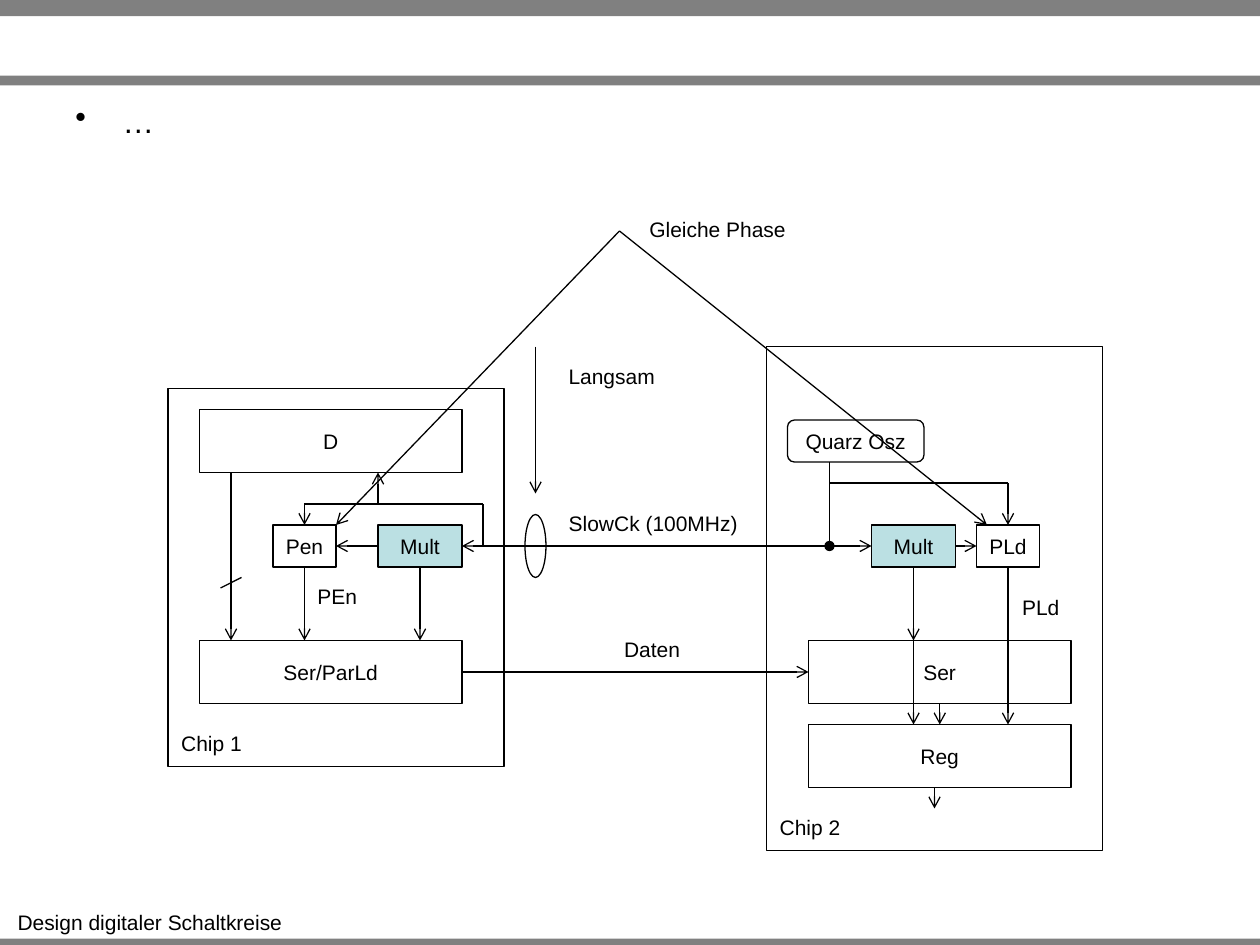
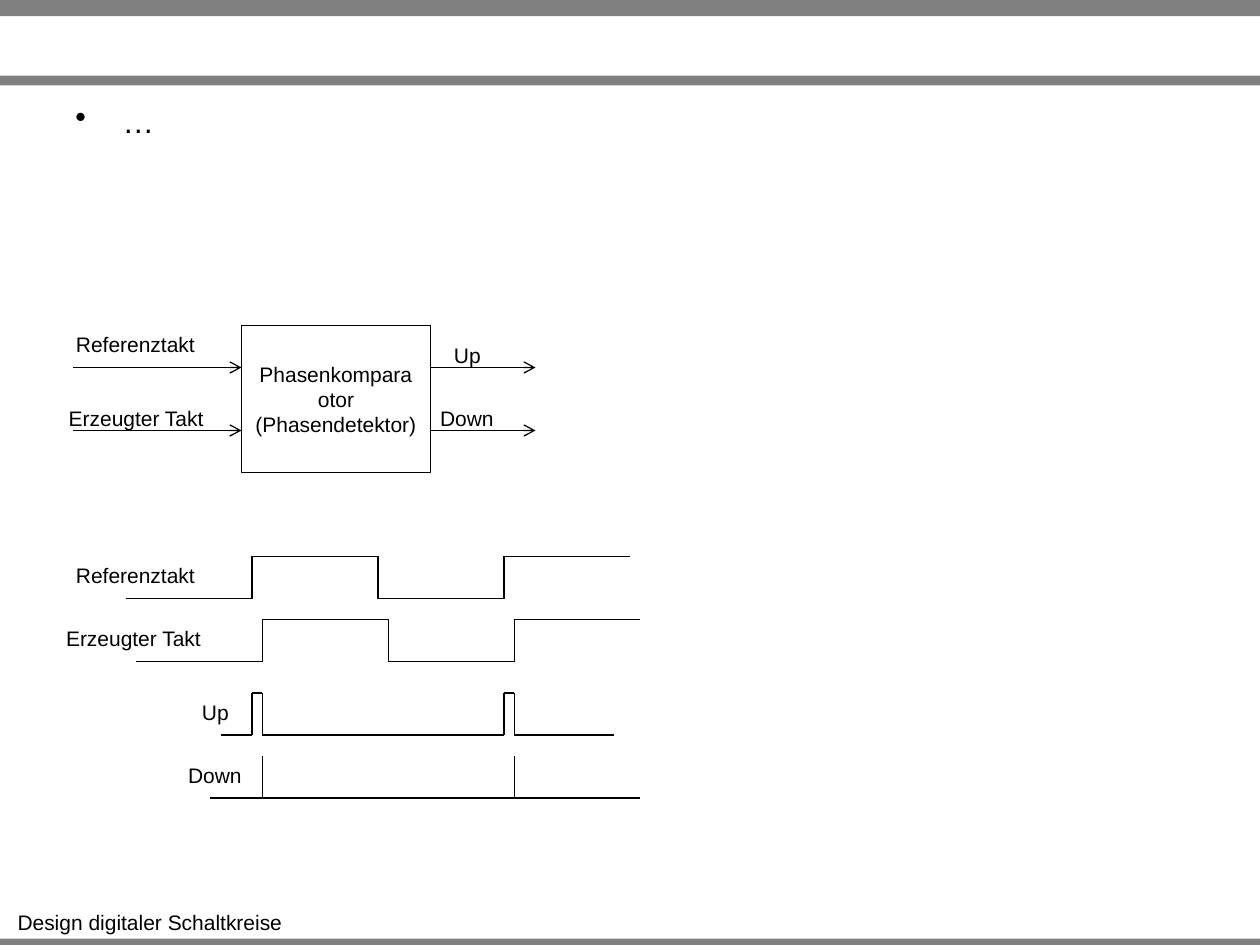
from dataclasses import dataclass
from itertools import pairwise

from pptx import Presentation
from pptx.dml.color import RGBColor
from pptx.enum.shapes import MSO_CONNECTOR, MSO_SHAPE
from pptx.enum.text import MSO_ANCHOR, MSO_AUTO_SIZE, PP_ALIGN
from pptx.oxml.ns import qn
from pptx.util import Pt
from lxml.etree import SubElement


@dataclass(frozen=True)
class Theme:
    font: str = "Arial"
    ink: RGBColor = RGBColor(0, 0, 0)
    band: RGBColor = RGBColor(0x80, 0x80, 0x80)
    accent: RGBColor = RGBColor(0xBB, 0xE0, 0xE3)
    label_size: float = 12
    body_size: float = 18
    line_width: float = 0.75


THEME = Theme()
TOP, LEFT, BOTTOM, RIGHT = range(4)
LABEL_HEIGHT = 21.6


@dataclass
class Joint:
    """The middle of one side of a box."""
    box: object
    side: int

    @property
    def point(self):
        box = self.box
        across = {LEFT: 0, RIGHT: 1}.get(self.side, 0.5)
        down = {TOP: 0, BOTTOM: 1}.get(self.side, 0.5)
        return ((box.left + across * box.width) / Pt(1),
                (box.top + down * box.height) / Pt(1))


# Basic parts

def write(para, text, size=THEME.label_size):
    span = para.add_run()
    span.text = text
    span.font.name = THEME.font
    span.font.size = Pt(size)
    span.font.color.rgb = THEME.ink


def shape(page, left, top, width, height, lines=(), fill=None,
          kind=MSO_SHAPE.RECTANGLE, outlined=True):
    box = page.shapes.add_shape(kind, Pt(left), Pt(top), Pt(width), Pt(height))
    box.shadow.inherit = False
    if fill is None:
        box.fill.background()
    else:
        box.fill.solid()
        box.fill.fore_color.rgb = fill
    if outlined:
        box.line.color.rgb = THEME.ink
        box.line.width = Pt(THEME.line_width)
    else:
        box.line.fill.background()
    frame = box.text_frame
    frame.word_wrap = True
    frame.vertical_anchor = MSO_ANCHOR.MIDDLE
    for index, line in enumerate(lines):
        para = frame.add_paragraph() if index else frame.paragraphs[0]
        para.alignment = PP_ALIGN.CENTER
        write(para, line)
    return box


def label(page, text, left, top, width):
    box = page.shapes.add_textbox(Pt(left), Pt(top), Pt(width), Pt(LABEL_HEIGHT))
    frame = box.text_frame
    frame.word_wrap = False
    frame.auto_size = MSO_AUTO_SIZE.SHAPE_TO_FIT_TEXT
    para = frame.paragraphs[0]
    para.alignment = PP_ALIGN.CENTER
    write(para, text)


def wire(page, start, end, arrow=False, dot=False):
    """Draw a line between two points or joints."""
    ends = [spot.point if isinstance(spot, Joint) else spot for spot in (start, end)]
    line = page.shapes.add_connector(
        MSO_CONNECTOR.STRAIGHT, *(Pt(value) for spot in ends for value in spot))
    if isinstance(start, Joint):
        line.begin_connect(start.box, start.side)
    if isinstance(end, Joint):
        line.end_connect(end.box, end.side)
    line.line.color.rgb = THEME.ink
    line.line.width = Pt(THEME.line_width)
    outline = line.line._get_or_add_ln()
    if dot:
        SubElement(outline, qn("a:headEnd"), type="oval")
    if arrow:
        SubElement(outline, qn("a:tailEnd"), type="arrow")
    SubElement(line._element.spPr, qn("a:effectLst"))


def route(page, *spots, arrow=False):
    """Chain wires through all spots, with an arrowhead on the last one."""
    for start, end in pairwise(spots):
        wire(page, start, end, arrow=arrow and end is spots[-1])


def offset(left, top):
    """Return a function that moves a local point, and any size after it."""
    return lambda x, y, *size: (left + x, top + y, *size)


# Frame shared by all slides

def add_page(deck):
    page = deck.slides.add_slide(deck.slide_layouts[6])
    for top, height in ((536.4, 6), (0, 9.2), (43.2, 5.6)):
        shape(page, 0, top, 720, height, fill=THEME.band, outlined=False)
    label(page, "Design digitaler Schaltkreise", 2.2, 516.2, 167)

    body = page.shapes.add_textbox(Pt(36), Pt(54.7), Pt(648), Pt(71.3))
    body.text_frame.word_wrap = True
    para = body.text_frame.paragraphs[0]
    settings = para._p.get_or_add_pPr()
    settings.set("marL", str(Pt(27)))
    settings.set("indent", str(-Pt(27)))
    SubElement(settings, qn("a:buChar"), char="•")
    write(para, "…", THEME.body_size)
    return page


# Block diagram of the two chips

def add_chip(page, name, left, top, height):
    shape(page, left, top, 192, height)
    label(page, name, left, top + height - 24, 49.7)
    return offset(left, top)


def add_sender(page, left, top):
    at = add_chip(page, "Chip 1", left, top, 216)
    data = shape(page, *at(18, 12, 150, 36), ["D"])
    serializer = shape(page, *at(18, 144, 150, 36), ["Ser/ParLd"])
    mult = shape(page, *at(120, 78, 48, 24), ["Mult"], THEME.accent)
    enable = shape(page, *at(60, 78, 36, 24), ["Pen"])

    wire(page, Joint(enable, BOTTOM), at(78, 144), arrow=True)
    wire(page, Joint(mult, BOTTOM), at(144, 144), arrow=True)
    wire(page, Joint(mult, LEFT), Joint(enable, RIGHT), arrow=True)
    label(page, "PEn", *at(78, 108, 37.4))

    # Bus from D, with its slash
    wire(page, at(36, 48), at(36, 144), arrow=True)
    wire(page, at(42, 108), at(30, 114))

    # Slow clock to Pen and D
    route(page, at(180, 90), at(180, 66), at(78, 66), Joint(enable, TOP), arrow=True)
    wire(page, at(120, 66), at(120, 48), arrow=True)
    return serializer, mult


def add_receiver(page, left, top):
    at = add_chip(page, "Chip 2", left, top, 288)
    shape(page, *at(12, 42, 78, 24), ["Quarz Osz"], kind=MSO_SHAPE.ROUNDED_RECTANGLE)
    mult = shape(page, *at(60, 102, 48, 24), ["Mult"], THEME.accent)
    load = shape(page, *at(120, 102, 36, 24), ["PLd"])
    serial = shape(page, *at(24, 168, 150, 36), ["Ser"])
    register = shape(page, *at(24, 216, 150, 36), ["Reg"])

    # Oscillator output
    wire(page, at(36, 66), at(36, 114))
    wire(page, at(30, 114), Joint(mult, LEFT), arrow=True)
    route(page, at(36, 78), at(138, 78), Joint(load, TOP), arrow=True)

    # Clocks and data to the registers
    wire(page, Joint(mult, RIGHT), Joint(load, LEFT), arrow=True)
    wire(page, Joint(mult, BOTTOM), at(84, 168), arrow=True)
    wire(page, at(84, 168), at(84, 216), arrow=True)
    wire(page, Joint(load, BOTTOM), at(138, 216), arrow=True)
    wire(page, Joint(serial, BOTTOM), Joint(register, TOP), arrow=True)
    wire(page, at(96, 252), at(96, 264), arrow=True)
    label(page, "PLd", *at(138.7, 138, 36))
    return serial


def add_chip_links(page, serializer, mult, serial):
    wire(page, Joint(serializer, RIGHT), Joint(serial, LEFT), arrow=True)
    label(page, "Daten", 349.2, 360, 46.8)

    # Slow clock line, with a ring and its pointer
    wire(page, (474, 312), Joint(mult, RIGHT), arrow=True, dot=True)
    label(page, "SlowCk (100MHz)", 317.5, 288, 111.6)
    shape(page, 300, 294, 12, 36, kind=MSO_SHAPE.OVAL)
    wire(page, (306, 198), (306, 282), arrow=True)
    label(page, "Langsam", 317.5, 204, 64.1)

    # Both parts run in phase
    for target in ((564, 300), (192, 300)):
        wire(page, (354, 132), target, arrow=True)
    label(page, "Gleiche Phase", 363.6, 120, 92.9)


# Phase detector and its timing

def add_detector(page, left, top):
    at = offset(left, top)
    shape(page, *at(0, 0, 108, 84), ["Phasenkomparaotor", "(Phasendetektor)"])
    for y in (24, 60):
        wire(page, at(-96, y), at(0, y), arrow=True)
        wire(page, at(108, y), at(168, y), arrow=True)
    label(page, "Referenztakt", *at(-102, 0, 82.8))
    label(page, "Erzeugter Takt", *at(-106.3, 42, 92.2))
    label(page, "Up", *at(114, 6, 30.2))
    label(page, "Down", *at(106.1, 42, 45.4))


def add_timing(page, left, top):
    half, lag, swing = 72, 6, 24
    at = offset(left, top)
    rises = (half, 3 * half)

    # Clocks: low and high halves in turn
    for delay, row in ((0, 0), (lag, 36)):
        corners = [at(delay + half * (step + side), row + swing * (1 - step % 2))
                   for step in range(4) for side in (0, 1)]
        route(page, *corners)
    label(page, "Referenztakt", *at(-36, 0, 82.8))
    label(page, "Erzeugter Takt", *at(-41.8, 36, 92.2))

    # Up: a pulse as long as the lag
    high = 78
    low = high + swing
    corners = [at(54, low)]
    for rise in rises:
        corners += [at(rise, low), at(rise, high),
                    at(rise + lag, high), at(rise + lag, low)]
    route(page, *corners, at(279, low))
    label(page, "Up", *at(36, high, 30.2))

    # Down: only short spikes
    high = 114
    low = high + swing
    wire(page, at(48, low), at(294, low))
    for rise in rises:
        wire(page, at(rise + lag, low), at(rise + lag, high))
    label(page, "Down", *at(28.1, high, 45.4))


def main():
    deck = Presentation()
    deck.slide_width, deck.slide_height = Pt(720), Pt(540)

    page = add_page(deck)
    serializer, mult = add_sender(page, 96, 222)
    serial = add_receiver(page, 438, 198)
    add_chip_links(page, serializer, mult, serial)

    page = add_page(deck)
    add_detector(page, 138, 186)
    add_timing(page, 72, 318)

    deck.save("out.pptx")


if __name__ == "__main__":
    main()
